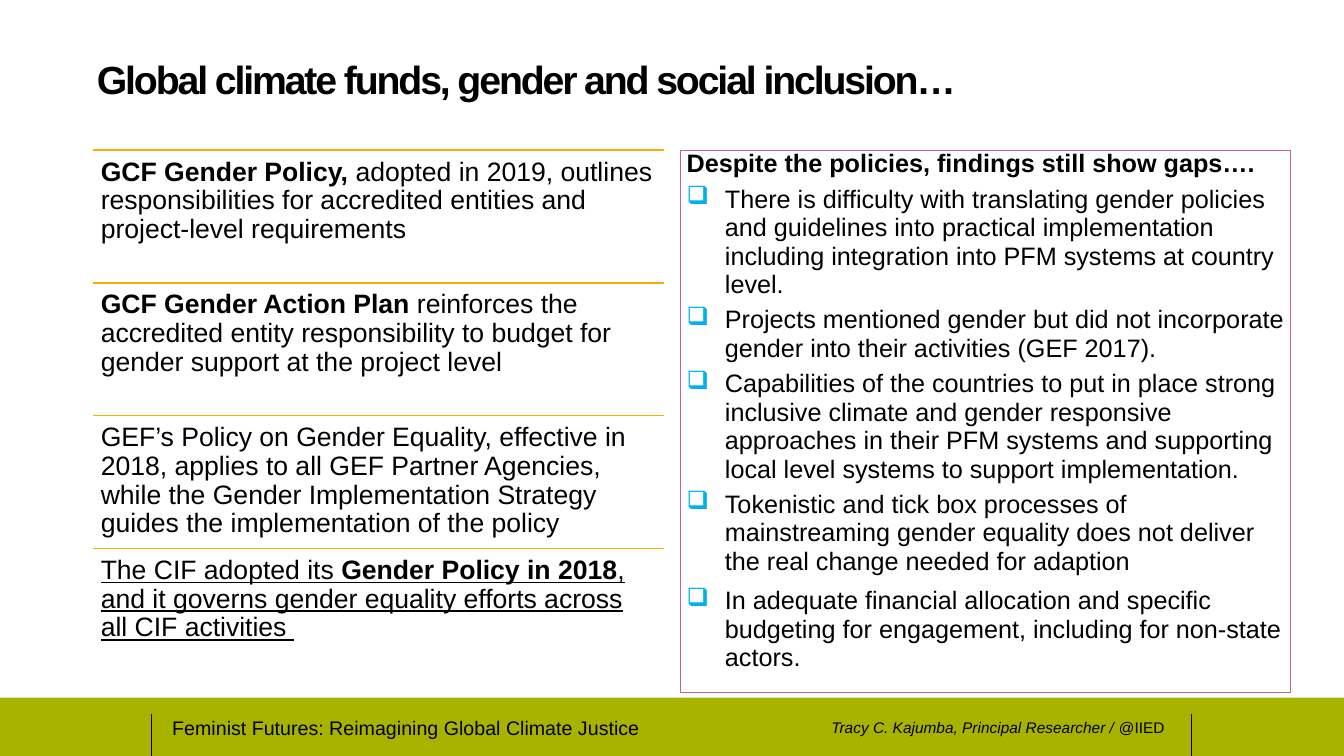
import pptx
import pptx.util
import pptx.dml.color
import pptx.enum.shapes
import pptx.enum.text
import pptx.oxml.ns
from lxml import etree
from pptx.util import Inches

# Content: each paragraph is a list of (text, style letters) runs
TITLE = "Global climate funds, gender and social inclusion…"
POLICIES = [
    [("GCF Gender Policy,", "b"),
     (" adopted in 2019, outlines responsibilities for accredited entities and "
      "project-level requirements", "")],
    [("GCF Gender Action Plan", "b"),
     (" reinforces the accredited entity responsibility to budget for gender "
      "support at the project level", "")],
    [("GEF’s Policy on Gender Equality, effective in 2018, applies to all GEF "
      "Partner Agencies, while the Gender Implementation Strategy guides the "
      "implementation of the policy", "")],
    [("The CIF adopted its ", "u"), ("Gender Policy in 2018", "bu"),
     (", and it governs gender equality efforts across all CIF activities ", "u")],
]
GAPS_HEADING = "Despite the policies, findings still show gaps…."
GAPS = [  # text, space after in points
    ("There is difficulty with translating gender policies and guidelines into "
     "practical implementation including integration into PFM systems at country "
     "level.", 5),
    ("Projects mentioned gender but did not incorporate gender into their "
     "activities (GEF 2017).", 5),
    ("Capabilities of the countries to put in place strong inclusive climate and "
     "gender responsive approaches in their PFM systems and supporting local "
     "level systems to support implementation.", 5),
    ("Tokenistic and tick box processes of mainstreaming gender equality does not "
     "deliver the real change needed for adaption", 8),
    ("In adequate financial allocation and specific budgeting for engagement, "
     "including for non-state actors.", 8),
]
EVENT = "Feminist Futures: Reimagining Global Climate Justice"
SPEAKER = [("Tracy C. Kajumba, Principal Researcher / ", "i"), ("@IIED", "")]

COLORS = {"text": "000000", "footer": "A8B300", "rule": "F2AF00",
          "panel": "FFFFFF", "border": "C55E9B", "bullet": "00B0F0"}
FONT = "Arial"
ALIGN = pptx.enum.text.PP_ALIGN
ANCHOR = pptx.enum.text.MSO_ANCHOR
SLIDE_W, SLIDE_H = 13.33, 7.5
FOOTER_TOP = 6.92
LEFT, TOP = 0.92, 1.49
POLICY_W, POLICY_H = 5.67, 1.317


def rgb(name):
    return pptx.dml.color.RGBColor.from_string(COLORS[name])


def add_child(parent, tag, **attributes):
    return etree.SubElement(parent, pptx.oxml.ns.qn(tag), **attributes)


def prepare_frame(shape, insets=(0.1, 0.05, 0.1, 0.05), anchor=ANCHOR.TOP):
    frame = shape.text_frame
    frame.word_wrap = True
    frame.auto_size = pptx.enum.text.MSO_AUTO_SIZE.NONE
    frame.vertical_anchor = anchor
    (frame.margin_left, frame.margin_top,
     frame.margin_right, frame.margin_bottom) = map(Inches, insets)
    return frame


def write(paragraph, runs, size, align=ALIGN.LEFT, line_spacing=1.0,
          after=0, bullet=None, tracking=None):
    if bullet:
        properties = paragraph._p.get_or_add_pPr()
        properties.set("marL", str(Inches(0.38)))
        properties.set("indent", str(-Inches(0.38)))
        add_child(add_child(properties, "a:buClr"), "a:srgbClr", val=COLORS["bullet"])
        add_child(properties, "a:buChar", char=bullet)
    paragraph.alignment = align
    paragraph.line_spacing = line_spacing
    paragraph.space_before = pptx.util.Pt(0)
    paragraph.space_after = pptx.util.Pt(after)
    for text, style in runs:
        run = paragraph.add_run()
        run.text = text
        run.font.name = FONT
        run.font.size = pptx.util.Pt(size)
        run.font.color.rgb = rgb("text")
        run.font.bold = "b" in style
        run.font.italic = "i" in style
        run.font.underline = "u" in style
        if tracking:
            run.font._element.set("spc", str(int(tracking * 100)))


def add_rectangle(slide, box, fill, border=None):
    rectangle = slide.shapes.add_shape(
        pptx.enum.shapes.MSO_SHAPE.RECTANGLE, *map(Inches, box))
    rectangle.shadow.inherit = False
    rectangle.fill.solid()
    rectangle.fill.fore_color.rgb = rgb(fill)
    if border:
        rectangle.line.color.rgb = rgb(border)
        rectangle.line.width = pptx.util.Pt(1)
    else:
        rectangle.line.fill.background()
    return rectangle


def add_rule(slide, start, end, color, width):
    rule = slide.shapes.add_connector(
        pptx.enum.shapes.MSO_CONNECTOR.STRAIGHT, *map(Inches, start + end))
    rule.line.color.rgb = rgb(color)
    rule.line.width = pptx.util.Pt(width)
    add_child(rule._element.spPr, "a:effectLst")


def add_textbox(slide, box, **frame_format):
    return prepare_frame(slide.shapes.add_textbox(*map(Inches, box)), **frame_format)


def main():
    deck = pptx.Presentation()
    deck.slide_width, deck.slide_height = Inches(SLIDE_W), Inches(SLIDE_H)
    slide = deck.slides.add_slide(deck.slide_layouts[5])

    # Footer band with its two dividers
    add_rectangle(slide, (0, FOOTER_TOP, SLIDE_W, SLIDE_H - FOOTER_TOP), "footer")
    for x in (1.5, 11.82):
        add_rule(slide, (x, 7.08), (x, SLIDE_H), "text", 0.5)
    event = add_textbox(slide, (1.61, 7.02, 5.89, 0.4), anchor=ANCHOR.MIDDLE)
    write(event.paragraphs[0], [(EVENT, "")], size=14)
    speaker = add_textbox(slide, (7.62, 7.02, 4.03, 0.4), anchor=ANCHOR.MIDDLE)
    write(speaker.paragraphs[0], SPEAKER, size=11, align=ALIGN.RIGHT)

    # Title
    title = slide.shapes.title
    title.left, title.top, title.width, title.height = map(
        Inches, (LEFT, 0.4, 11.5, 0.83))
    heading = prepare_frame(title, insets=(0.04, 0, 0, 0), anchor=ANCHOR.MIDDLE)
    write(heading.paragraphs[0], [(TITLE, "b")], size=28,
          line_spacing=0.9, tracking=-1.5)

    # Policies, each under its own rule
    for row, policy in enumerate(POLICIES):
        y = TOP + row * POLICY_H
        add_rule(slide, (LEFT, y), (LEFT + POLICY_W, y), "rule", 1)
        entry = add_textbox(slide, (LEFT, y, POLICY_W, POLICY_H), insets=(0.08,) * 4)
        write(entry.paragraphs[0], policy, size=19, line_spacing=0.9)

    # Panel of gaps
    panel = add_rectangle(slide, (6.75, TOP, 6.05, 5.38), "panel", "border")
    gaps = prepare_frame(panel, insets=(0.06, 0, 0, 0))
    write(gaps.paragraphs[0], [(GAPS_HEADING, "b")], size=18,
          line_spacing=0.94, after=5)
    for gap, after in GAPS:
        write(gaps.add_paragraph(), [(gap, "")], size=18,
              line_spacing=0.94, after=after, bullet="❑")

    deck.save("out.pptx")


if __name__ == "__main__":
    main()
